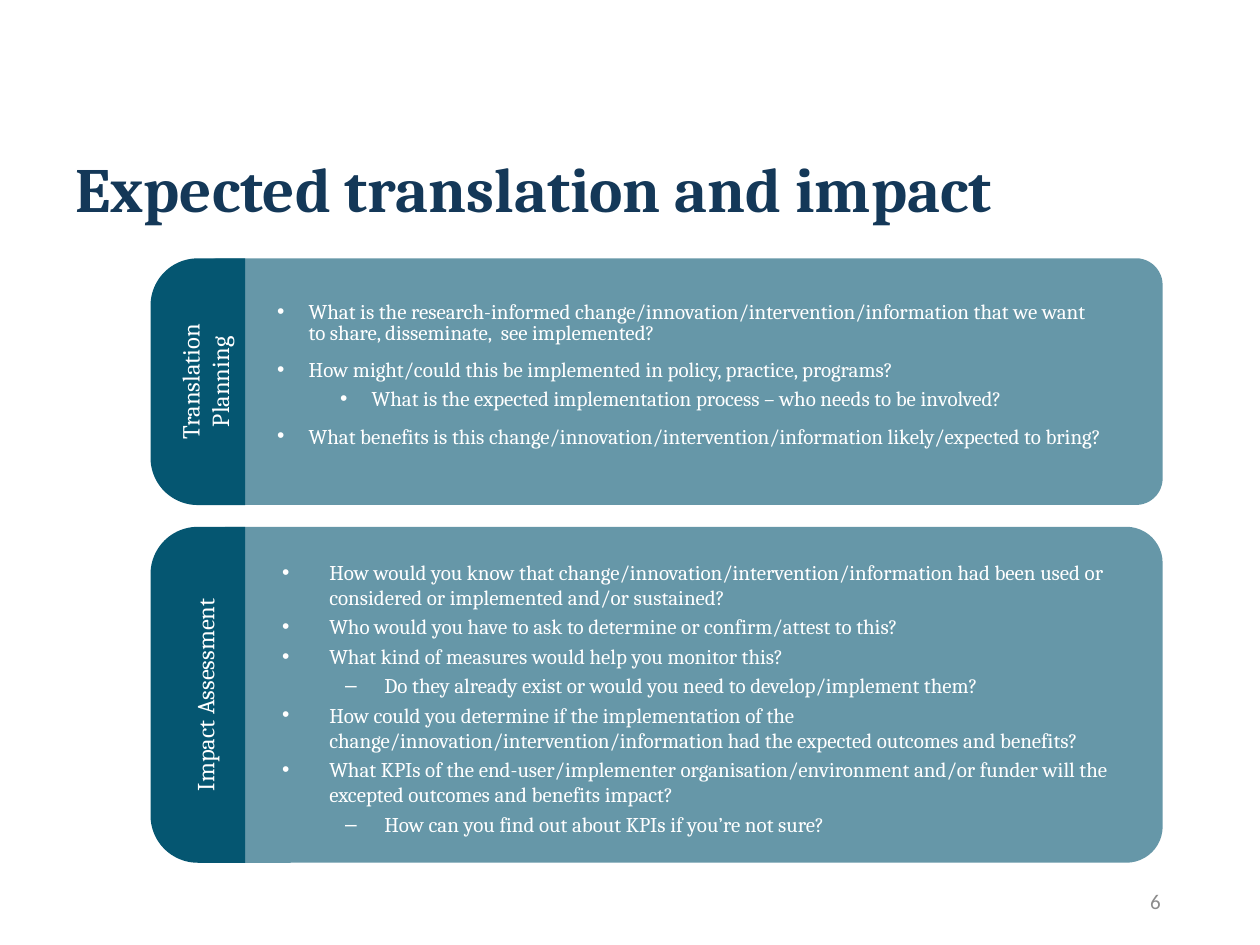
from lxml.etree import SubElement
from pptx import Presentation
from pptx.dml.color import RGBColor
from pptx.enum.shapes import MSO_SHAPE
from pptx.enum.text import MSO_ANCHOR, MSO_AUTO_SIZE, PP_ALIGN
from pptx.oxml.ns import qn
from pptx.util import Pt

COLORS = {
    "teal": "055671",
    "navy": "143858",
    "white": "FFFFFF",
    "grey": "8C8C8C",
}
PANEL_LEFT, PANEL_WIDTH = 110, 554.4
TAB_CENTER, TAB_WIDTH = 113, 54

PLANNING = [
    (0, "•", "What is the research-informed change/innovation/intervention/information that we want to share, disseminate,  see implemented?"),
    (0, "•", "How might/could this be implemented in policy, practice, programs?"),
    (1, "•", "What is the expected implementation process – who needs to be involved?"),
    (0, "•", "What benefits is this change/innovation/intervention/information likely/expected to bring?"),
]
ASSESSMENT = [
    (0, "•", "How would you know that change/innovation/intervention/information had been used or considered or implemented and/or sustained?"),
    (0, "•", "Who would you have to ask to determine or confirm/attest to this?"),
    (0, "•", "What kind of measures would help you monitor this?"),
    (1, "–", "Do they already exist or would you need to develop/implement them?"),
    (0, "•", "How could you determine if the implementation of the change/innovation/intervention/information had the expected outcomes and benefits?"),
    (0, "•", "What KPIs of the end-user/implementer organisation/environment and/or funder will the excepted outcomes and benefits impact?"),
    (1, "–", "How can you find out about KPIs if you’re not sure?"),
]


def style(paragraph, size, color, name="Cambria", bold=False):
    font = paragraph.font
    font.name, font.size, font.bold = name, Pt(size), bold
    font.color.rgb = RGBColor.from_string(COLORS[color])


def place(shape, left, top, width, height):
    shape.left, shape.top = Pt(left), Pt(top)
    shape.width, shape.height = Pt(width), Pt(height)


def add_filled_shape(page, kind, left, top, width, height):
    shape = page.shapes.add_shape(kind, Pt(left), Pt(top), Pt(width), Pt(height))
    shape.shadow.inherit = False
    shape.fill.solid()
    shape.fill.fore_color.rgb = RGBColor.from_string(COLORS["teal"])
    shape.line.fill.background()
    return shape


def add_panel(page, top, height):
    panel = add_filled_shape(page, MSO_SHAPE.ROUNDED_RECTANGLE, PANEL_LEFT, top, PANEL_WIDTH, height)
    panel.adjustments[0] = 0.108
    color = panel.fill._xPr.find(qn("a:solidFill"))[0]
    SubElement(color, qn("a:alpha"), val="61000")


def add_tab(page, label, top, height):
    left = TAB_CENTER - height / 2
    tab_top = top + (height - TAB_WIDTH) / 2
    tab = add_filled_shape(page, MSO_SHAPE.ROUND_2_SAME_RECTANGLE, left, tab_top, height, TAB_WIDTH)
    tab.adjustments[0], tab.adjustments[1] = 0.5, 0
    tab.rotation = 270
    frame = tab.text_frame
    frame.word_wrap = True
    frame.vertical_anchor = MSO_ANCHOR.MIDDLE
    para = frame.paragraphs[0]
    para.text = label
    para.alignment = PP_ALIGN.CENTER
    style(para, 14, "white")


def fill_list(frame, items, indents, spaces, line_spacing):
    frame.word_wrap = True
    frame.auto_size = MSO_AUTO_SIZE.NONE
    frame.vertical_anchor = MSO_ANCHOR.TOP
    for index, (level, bullet, text) in enumerate(items):
        para = frame.add_paragraph() if index else frame.paragraphs[0]
        para.text = text
        para.level = level
        margin, hanging = indents[level]
        properties = para._p.get_or_add_pPr()
        properties.set("marL", str(Pt(margin)))
        properties.set("indent", str(-Pt(hanging)))
        SubElement(properties, qn("a:buFont"), typeface="Arial")
        SubElement(properties, qn("a:buChar"), char=bullet)
        para.alignment = PP_ALIGN.LEFT
        para.line_spacing = line_spacing
        para.space_before = Pt(spaces[level] if index else 0)
        style(para, 12, "white")


def add_title(page, text):
    title = page.shapes.title
    place(title, 36, 64.8, 648, 90)
    frame = title.text_frame
    frame.auto_size = MSO_AUTO_SIZE.NONE
    frame.vertical_anchor = MSO_ANCHOR.MIDDLE
    para = frame.paragraphs[0]
    para.text = text
    para.alignment = PP_ALIGN.LEFT
    para.line_spacing = 0.9
    style(para, 36, "navy", bold=True)


def add_page_number(page, number):
    box = page.shapes.add_textbox(Pt(508.3), Pt(500.4), Pt(162), Pt(28.8))
    frame = box.text_frame
    frame.word_wrap = True
    frame.vertical_anchor = MSO_ANCHOR.MIDDLE
    para = frame.paragraphs[0]
    para.text = number
    para.alignment = PP_ALIGN.RIGHT
    style(para, 12, "grey", name="Calibri")


def main():
    deck = Presentation()
    deck.slide_width, deck.slide_height = Pt(720), Pt(540)
    page = deck.slides.add_slide(deck.slide_layouts[1])
    add_title(page, "Expected translation and impact")

    sections = [("Translation Planning", 147.6, 141), ("Impact Assessment", 301, 192)]
    for label, top, height in sections:
        add_panel(page, top, height)
        add_tab(page, label, top, height)

    planning = page.placeholders[1]
    place(planning, 151.2, 170, 486, 96.5)
    page.shapes._spTree.append(planning._element)
    fill_list(planning.text_frame, PLANNING, [(18, 18), (54, 18)], [10, 5], 0.8)

    assessment = page.shapes.add_textbox(Pt(154.1), Pt(316), Pt(494.6), Pt(176.4))
    fill_list(assessment.text_frame, ASSESSMENT, [(27, 27), (58.5, 22.5)], [2.4, 2.4], 1)

    add_page_number(page, "6")
    deck.save("out.pptx")


if __name__ == "__main__":
    main()
